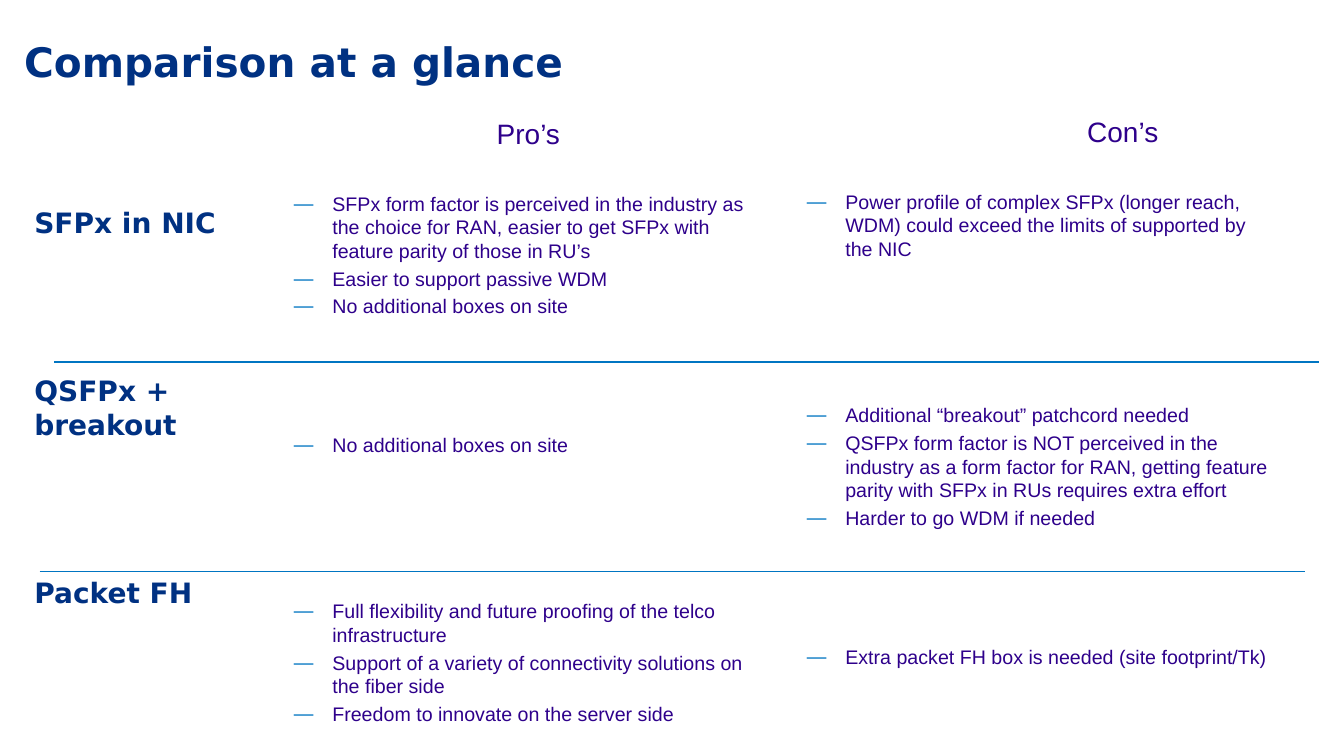
"""Builds a slide that compares three fronthaul options by pros and cons."""
from dataclasses import dataclass

from lxml.etree import SubElement
from pptx import Presentation
from pptx.dml.color import RGBColor
from pptx.enum.shapes import MSO_CONNECTOR
from pptx.enum.text import MSO_ANCHOR, PP_ALIGN
from pptx.oxml.ns import qn
from pptx.slide import Slide
from pptx.util import Pt

COLORS = {"heading": "003182", "body": "2E008B", "accent": "0075C2"}
LINE_FACTOR = 1.2
BULLET_INDENT = 27.4
PROS_LEFT, CONS_LEFT, COLUMN_WIDTH = 210, 576.4, 334.8
LABEL_LEFT, LABEL_WIDTH = 24.5, 152.6


@dataclass(frozen=True)
class TextStyle:
    font: str
    size: float
    color: str
    bold: bool = False
    bullet: bool = False
    align: PP_ALIGN = PP_ALIGN.LEFT


@dataclass(frozen=True)
class Cell:
    top: float
    lines: int
    points: tuple[str, ...]


@dataclass(frozen=True)
class Option:
    name: str
    label_top: float
    label_lines: int
    pros: Cell
    cons: Cell


@dataclass(frozen=True)
class Divider:
    left: float
    top: float
    width: float = 903.6


TITLE = TextStyle("DejaVu Sans", 29, "heading", bold=True)
LABEL = TextStyle("DejaVu Sans", 20, "heading", bold=True)
HEADER = TextStyle("Arial", 20, "body", align=PP_ALIGN.CENTER)
POINT = TextStyle("Arial", 14, "body", bullet=True)

OPTIONS = (
    Option(
        "SFPx in NIC", 146.9, 1,
        Cell(136.9, 5, (
            "SFPx form factor is perceived in the industry as the choice for RAN, "
            "easier to get SFPx with feature parity of those in RU’s",
            "Easier to support passive WDM",
            "No additional boxes on site",
        )),
        Cell(135.5, 3, (
            "Power profile of complex SFPx (longer reach, WDM) could exceed "
            "the limits of supported by the NIC",
        )),
    ),
    Option(
        "QSFPx + breakout", 266.9, 2,
        Cell(309.1, 1, ("No additional boxes on site",)),
        Cell(288, 5, (
            "Additional “breakout” patchcord needed",
            "QSFPx form factor is NOT perceived in the industry as a form factor "
            "for RAN, getting feature parity with SFPx in RUs requires extra effort",
            "Harder to go WDM if needed",
        )),
    ),
    Option(
        "Packet FH", 410.9, 1,
        Cell(428, 5, (
            "Full flexibility and future proofing of the telco infrastructure",
            "Support of a variety of connectivity solutions on the fiber side",
            "Freedom to innovate on the server side",
        )),
        Cell(460.5, 1, ("Extra packet FH box is needed (site footprint/Tk)",)),
    ),
)
DIVIDERS = (Divider(38.9, 258.5), Divider(28.3, 408.2))


def add_dash_bullet(paragraph) -> None:
    """Gives a paragraph a hanging dash bullet."""
    properties = paragraph._p.get_or_add_pPr()
    properties.set("marL", str(Pt(BULLET_INDENT)))
    properties.set("indent", str(-Pt(BULLET_INDENT)))
    color = SubElement(properties, qn("a:buClr"))
    SubElement(color, qn("a:srgbClr")).set("val", COLORS["accent"])
    SubElement(properties, qn("a:buFont")).set("typeface", "Arial")
    SubElement(properties, qn("a:buChar")).set("char", "—")


def add_text(slide: Slide, left: float, top: float, width: float, height: float,
             texts: tuple[str, ...], style: TextStyle) -> None:
    """Adds a text box with one paragraph for each text."""
    shape = slide.shapes.add_textbox(Pt(left), Pt(top), Pt(width), Pt(height))
    text_frame = shape.text_frame
    text_frame.word_wrap = True
    text_frame.vertical_anchor = MSO_ANCHOR.TOP
    text_frame.margin_left = text_frame.margin_right = 0
    text_frame.margin_top = text_frame.margin_bottom = 0
    text_frame.text = "\n".join(texts)
    for index, paragraph in enumerate(text_frame.paragraphs):
        paragraph.alignment = style.align
        paragraph.line_spacing = Pt(style.size * LINE_FACTOR)
        if index:
            paragraph.space_before = Pt(3)
        if style.bullet:
            add_dash_bullet(paragraph)
        for run in paragraph.runs:
            run.font.name = style.font
            run.font.size = Pt(style.size)
            run.font.bold = style.bold
            run.font.color.rgb = RGBColor.from_string(COLORS[style.color])


def add_label(slide: Slide, option: Option) -> None:
    """Adds the name of an option at the left of its row."""
    height = option.label_lines * LABEL.size * LINE_FACTOR
    add_text(slide, LABEL_LEFT, option.label_top, LABEL_WIDTH, height,
             (option.name,), LABEL)


def add_cell(slide: Slide, left: float, cell: Cell) -> None:
    """Adds the bulleted points of one comparison cell."""
    height = cell.lines * POINT.size * LINE_FACTOR + 3 * (len(cell.points) - 1)
    add_text(slide, left, cell.top, COLUMN_WIDTH, height, cell.points, POINT)


def add_divider(slide: Slide, divider: Divider) -> None:
    """Adds a horizontal line between two options."""
    connector = slide.shapes.add_connector(
        MSO_CONNECTOR.STRAIGHT, Pt(divider.left), Pt(divider.top),
        Pt(divider.left + divider.width), Pt(divider.top))
    connector.line.color.rgb = RGBColor.from_string(COLORS["accent"])
    connector.line.width = Pt(1)
    SubElement(connector._element.spPr, qn("a:effectLst"))


def main() -> None:
    """Builds and saves the slide."""
    presentation = Presentation()
    presentation.slide_width, presentation.slide_height = Pt(960), Pt(540)
    slide = presentation.slides.add_slide(presentation.slide_layouts[6])
    add_text(slide, 17.3, 26.3, 646, 35, ("Comparison at a glance",), TITLE)
    add_text(slide, PROS_LEFT, 82.9, COLUMN_WIDTH, 24, ("Pro’s",), HEADER)
    add_text(slide, 752, 81.5, 100, 24, ("Con’s",), HEADER)
    for option in OPTIONS:
        add_label(slide, option)
        add_cell(slide, PROS_LEFT, option.pros)
        add_cell(slide, CONS_LEFT, option.cons)
    for divider in DIVIDERS:
        add_divider(slide, divider)
    presentation.save("out.pptx")


if __name__ == "__main__":
    main()
